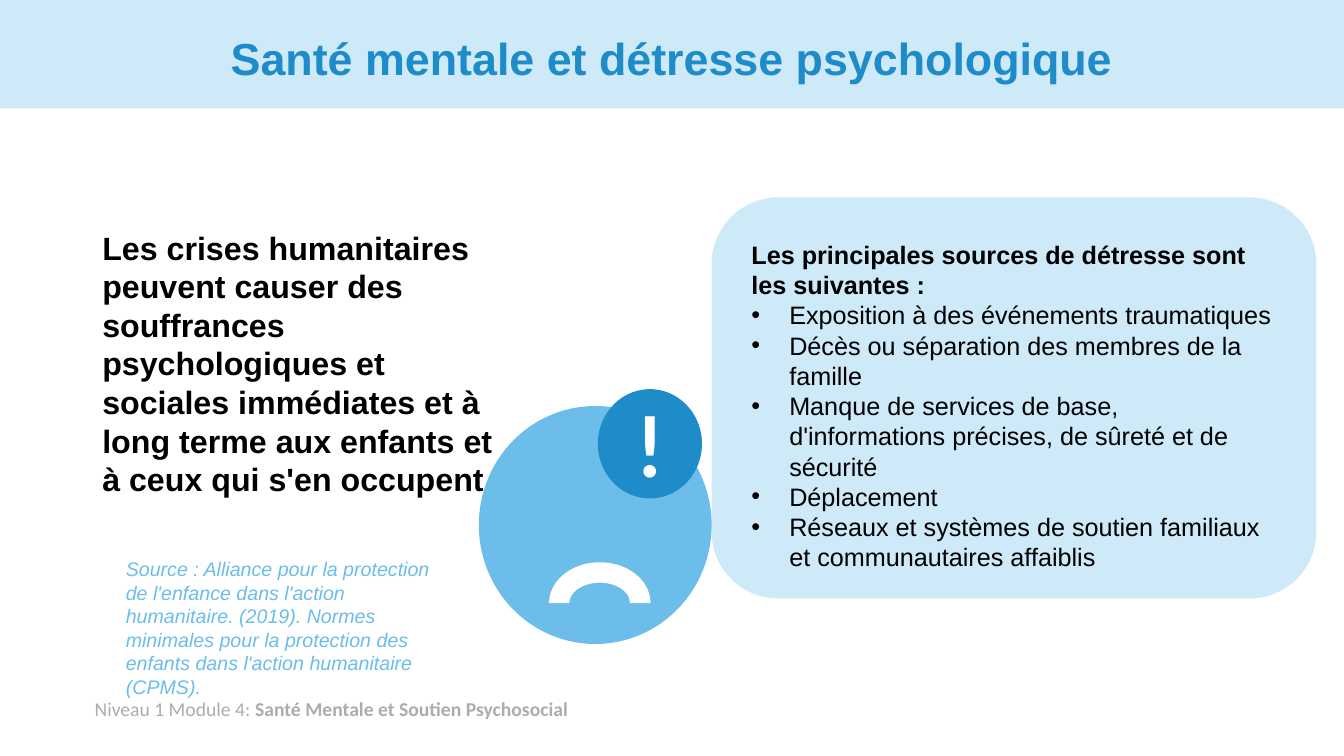
from pptx import Presentation
from pptx.dml.color import RGBColor
from pptx.enum.shapes import MSO_SHAPE as Preset
from pptx.enum.text import MSO_ANCHOR as Anchor, PP_ALIGN as Align
from pptx.oxml.ns import qn
from pptx.util import Pt
from lxml.etree import SubElement

PALE_BLUE = RGBColor(0xCE, 0xE9, 0xF8)
SKY_BLUE = RGBColor(0x6C, 0xBD, 0xEA)
DEEP_BLUE = RGBColor(0x1D, 0x8C, 0xC8)
GREY = RGBColor(0xAF, 0xAB, 0xAB)
BLACK = RGBColor(0, 0, 0)
WHITE = RGBColor(255, 255, 255)

BULLET_INDENT = 27
DISTRESS_SOURCES = [
    "Exposition à des événements traumatiques",
    "Décès ou séparation des membres de la famille",
    "Manque de services de base, d'informations précises, de sûreté et de sécurité",
    "Déplacement",
    "Réseaux et systèmes de soutien familiaux et communautaires affaiblis",
]


def add_filled_shape(slide, preset, left, top, width, height, color):
    shape = slide.shapes.add_shape(preset, Pt(left), Pt(top), Pt(width), Pt(height))
    shape.fill.solid()
    shape.fill.fore_color.rgb = color
    shape.line.fill.background()
    shape.shadow.inherit = False
    return shape


def add_text_frame(slide, left, top, width, height, anchor=Anchor.TOP):
    box = slide.shapes.add_textbox(Pt(left), Pt(top), Pt(width), Pt(height))
    frame = box.text_frame
    frame.word_wrap = True
    frame.vertical_anchor = anchor
    return frame


def add_run(paragraph, text, size, color, font="Arial", bold=False, italic=False):
    run = paragraph.add_run()
    run.text = text
    run.font.name = font
    run.font.size = Pt(size)
    run.font.color.rgb = color
    run.font.bold = bold
    run.font.italic = italic


def make_bullet(paragraph):
    properties = paragraph._p.get_or_add_pPr()
    properties.set("marL", str(Pt(BULLET_INDENT)))
    properties.set("indent", str(-Pt(BULLET_INDENT)))
    SubElement(properties, qn("a:buFont")).set("typeface", "Arial")
    SubElement(properties, qn("a:buChar")).set("char", "•")


def add_header(slide):
    add_filled_shape(slide, Preset.RECTANGLE, 0, 0, 960, 77.5, PALE_BLUE)
    title = add_text_frame(slide, 66, 9, 828, 68.5, Anchor.MIDDLE).paragraphs[0]
    title.alignment = Align.CENTER
    title.line_spacing = 0.9
    add_run(title, "Santé mentale et détresse psychologique", 32, DEEP_BLUE, bold=True)


def add_footer(slide):
    footer = add_text_frame(slide, 60.5, 494.5, 445, 24.5).paragraphs[0]
    add_run(footer, "Niveau 1 Module 4: ", 14, GREY, font="Calibri")
    add_run(footer, "Santé Mentale et Soutien Psychosocial", 14, GREY,
            font="Calibri", bold=True)


def add_distress_panel(slide):
    add_filled_shape(slide, Preset.ROUNDED_RECTANGLE, 508.3, 141, 432, 286.5, PALE_BLUE)
    frame = add_text_frame(slide, 529.7, 167.3, 388, 247)
    add_run(frame.paragraphs[0], "Les principales sources de détresse sont les suivantes :",
            18, BLACK, bold=True)
    for source in DISTRESS_SOURCES:
        paragraph = frame.add_paragraph()
        make_bullet(paragraph)
        add_run(paragraph, source, 18, BLACK)


def add_statement(slide):
    citation = add_text_frame(slide, 82.8, 394.5, 232, 109).paragraphs[0]
    add_run(citation,
            "Source : Alliance pour la protection de l'enfance dans l'action humanitaire. "
            "(2019). Normes minimales pour la protection des enfants dans l'action "
            "humanitaire (CPMS).", 14, SKY_BLUE, italic=True)
    statement = add_text_frame(slide, 66, 159.3, 302.4, 202).paragraphs[0]
    add_run(statement,
            "Les crises humanitaires peuvent causer des souffrances psychologiques et "
            "sociales immédiates et à long terme aux enfants et à ceux qui s'en occupent.",
            23, BLACK, bold=True)


def add_sad_face(slide):
    add_filled_shape(slide, Preset.OVAL, 342, 290, 166.3, 170, SKY_BLUE)
    add_filled_shape(slide, Preset.BLOCK_ARC, 392.2, 401.6, 72.5, 58.3, WHITE)
    alert = add_filled_shape(slide, Preset.OVAL, 427, 278, 74.4, 78, DEEP_BLUE)
    alert.text_frame.vertical_anchor = Anchor.MIDDLE
    paragraph = alert.text_frame.paragraphs[0]
    paragraph.alignment = Align.CENTER
    add_run(paragraph, "!", 60, WHITE, font="Lato", bold=True)


def main():
    presentation = Presentation()
    presentation.slide_width = Pt(960)
    presentation.slide_height = Pt(540)
    slide = presentation.slides.add_slide(presentation.slide_layouts[6])
    add_header(slide)
    add_footer(slide)
    add_distress_panel(slide)
    add_statement(slide)
    add_sad_face(slide)
    presentation.save("out.pptx")


if __name__ == "__main__":
    main()
